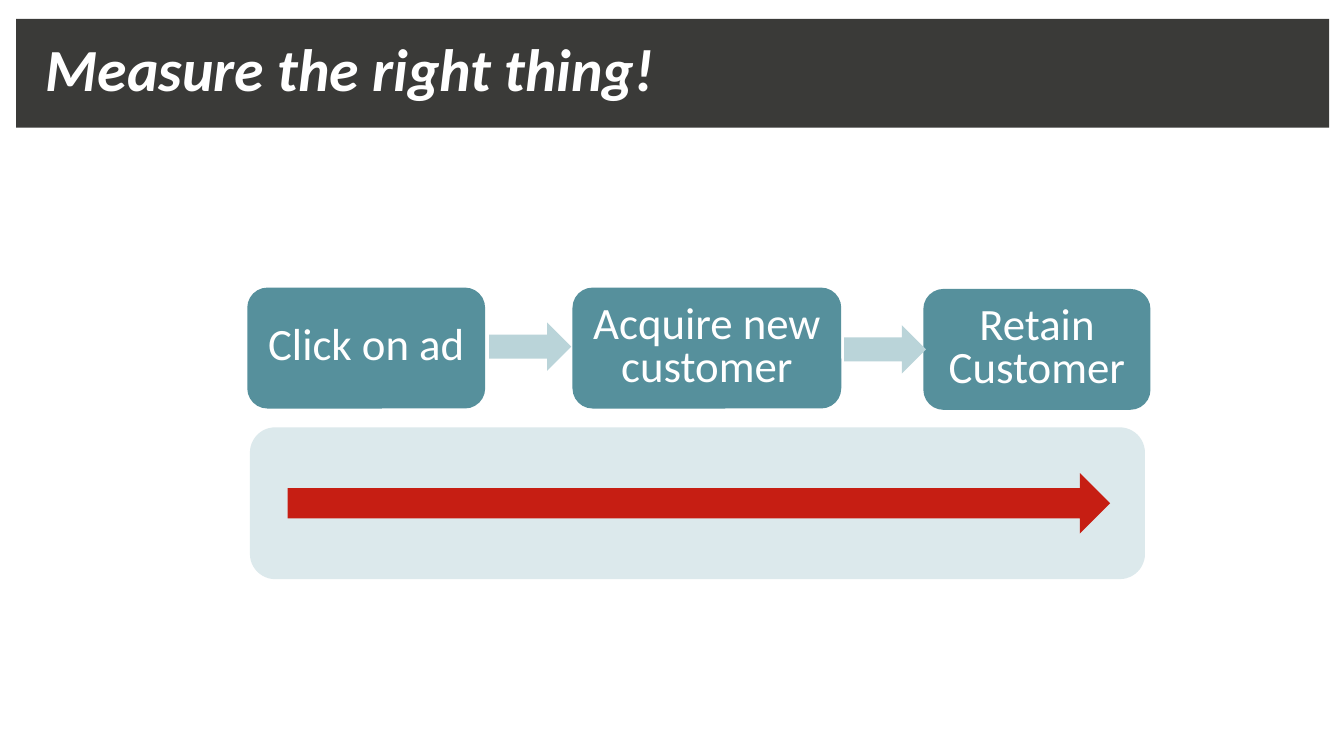
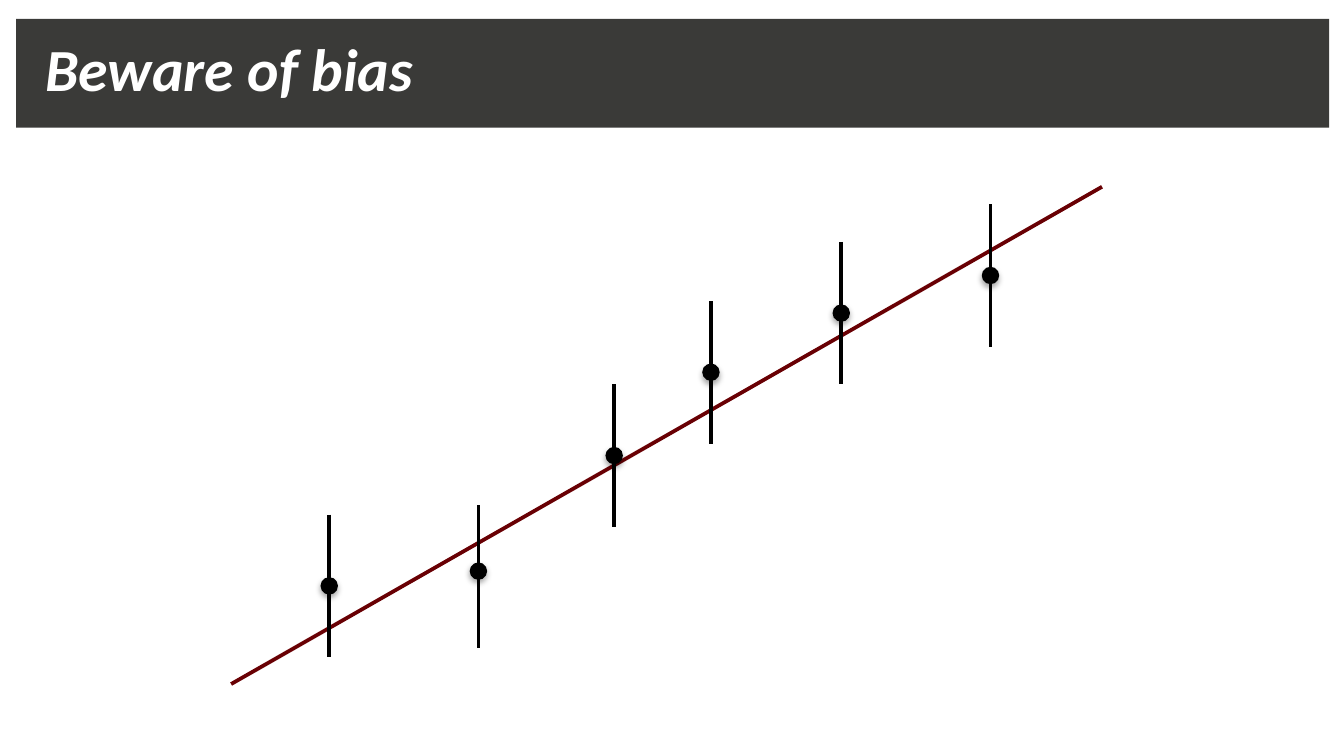
from pptx import Presentation
from pptx.dml.color import RGBColor
from pptx.enum.shapes import MSO_CONNECTOR, MSO_SHAPE
from pptx.enum.text import MSO_ANCHOR, PP_ALIGN
from pptx.oxml import parse_xml
from pptx.oxml.ns import nsdecls, qn
from pptx.util import Inches, Pt

FONT = "Calibri"
WHITE = RGBColor(0xFF, 0xFF, 0xFF)
BLACK = RGBColor(0, 0, 0)
CHARCOAL = RGBColor(0x3A, 0x3A, 0x38)
TEAL = RGBColor(0x56, 0x90, 0x9C)
LIGHT_TEAL = RGBColor(0xBA, 0xD4, 0xD9)
PALE_TEAL = RGBColor(0xDC, 0xE9, 0xEC)
RED = RGBColor(0xC6, 0x1E, 0x13)
MAROON = RGBColor(0x69, 0x00, 0x04)

FUNNEL_TITLE = "Measure the right thing!"
STEPS = [
    ("Click on ad", 1.84, 2.14, 1.77),
    ("Acquire new customer", 4.26, 2.14, 2.0),
    ("Retain Customer", 6.87, 2.15, 1.69),
]
STEP_H = 0.9
STEP_ARROWS = [(3.64, 2.4), (6.28, 2.42)]

BIAS_TITLE = "Beware of bias"
TREND = (1.72, 5.09, 8.2, 1.39)
POINTS = [
    (2.45, 3.83, 4.36),
    (3.56, 3.76, 4.25),
    (4.57, 2.86, 3.39),
    (5.29, 2.24, 2.77),
    (6.26, 1.8, 2.33),
    (7.37, 1.52, 2.05),
]
BAR_H = 1.06
DOT = 0.13


def add_shape(s, kind, x, y, w, h, color):
    sp = s.shapes.add_shape(kind, Inches(x), Inches(y), Inches(w), Inches(h))
    sp.fill.solid()
    sp.fill.fore_color.rgb = color
    sp.line.fill.background()
    sp.shadow.inherit = False
    return sp


def add_line(s, x1, y1, x2, y2, color):
    ln = s.shapes.add_connector(
        MSO_CONNECTOR.STRAIGHT, Inches(x1), Inches(y1), Inches(x2), Inches(y2))
    ln.line.color.rgb = color
    ln.line.width = Pt(2)
    ln._element.spPr.append(parse_xml(f"<a:effectLst {nsdecls('a')}/>"))


def write(sp, text, size):
    tf = sp.text_frame
    tf.word_wrap = True
    tf.vertical_anchor = MSO_ANCHOR.MIDDLE
    p = tf.paragraphs[0]
    p.text = text
    p.font.name = FONT
    p.font.size = Pt(size)
    p.font.color.rgb = WHITE
    return p


def add_title_slide(prs, title):
    s = prs.slides.add_slide(prs.slide_layouts[6])
    add_shape(s, MSO_SHAPE.RECTANGLE, 0.12, 0.14, 9.77, 0.81, CHARCOAL)
    box = s.shapes.add_textbox(Inches(0.24), Inches(0.17), Inches(9.77), Inches(0.67))
    p = write(box, title, 32)
    p.font.bold = True
    p.font.italic = True
    return s


def add_step(s, label, x, y, w):
    sp = add_shape(s, MSO_SHAPE.ROUNDED_RECTANGLE, x, y, w, STEP_H, TEAL)
    tf = sp.text_frame
    tf.margin_left = tf.margin_right = Inches(0.05)
    p = write(sp, label, 24)
    p.alignment = PP_ALIGN.CENTER
    p.line_spacing = 0.8


def add_point(s, x, top, y):
    add_line(s, x, top, x, top + BAR_H, BLACK)
    dot = add_shape(s, MSO_SHAPE.OVAL, x - DOT / 2, y - DOT / 2, DOT, DOT, BLACK)
    dot._element.spPr.find(qn("a:effectLst")).append(parse_xml(
        f'<a:outerShdw {nsdecls("a")} blurRad="{Pt(3.1)}" dist="{Pt(1.8)}" '
        'dir="5400000" rotWithShape="0"><a:srgbClr val="000000">'
        '<a:alpha val="35000"/></a:srgbClr></a:outerShdw>'))


def build_funnel(prs):
    s = add_title_slide(prs, FUNNEL_TITLE)
    add_shape(s, MSO_SHAPE.ROUNDED_RECTANGLE, 1.86, 3.18, 6.66, 1.13, PALE_TEAL)
    add_shape(s, MSO_SHAPE.RIGHT_ARROW, 2.14, 3.52, 6.12, 0.45, RED)
    for step in STEPS:
        add_step(s, *step)
    for x, y in STEP_ARROWS:
        add_shape(s, MSO_SHAPE.RIGHT_ARROW, x, y, 0.61, 0.36, LIGHT_TEAL)


def build_bias(prs):
    s = add_title_slide(prs, BIAS_TITLE)
    add_line(s, *TREND, MAROON)
    for point in POINTS:
        add_point(s, *point)


def main():
    prs = Presentation()
    prs.slide_width = Inches(10)
    prs.slide_height = Inches(10 * 9 / 16)
    build_funnel(prs)
    build_bias(prs)
    prs.save("out.pptx")


if __name__ == "__main__":
    main()
